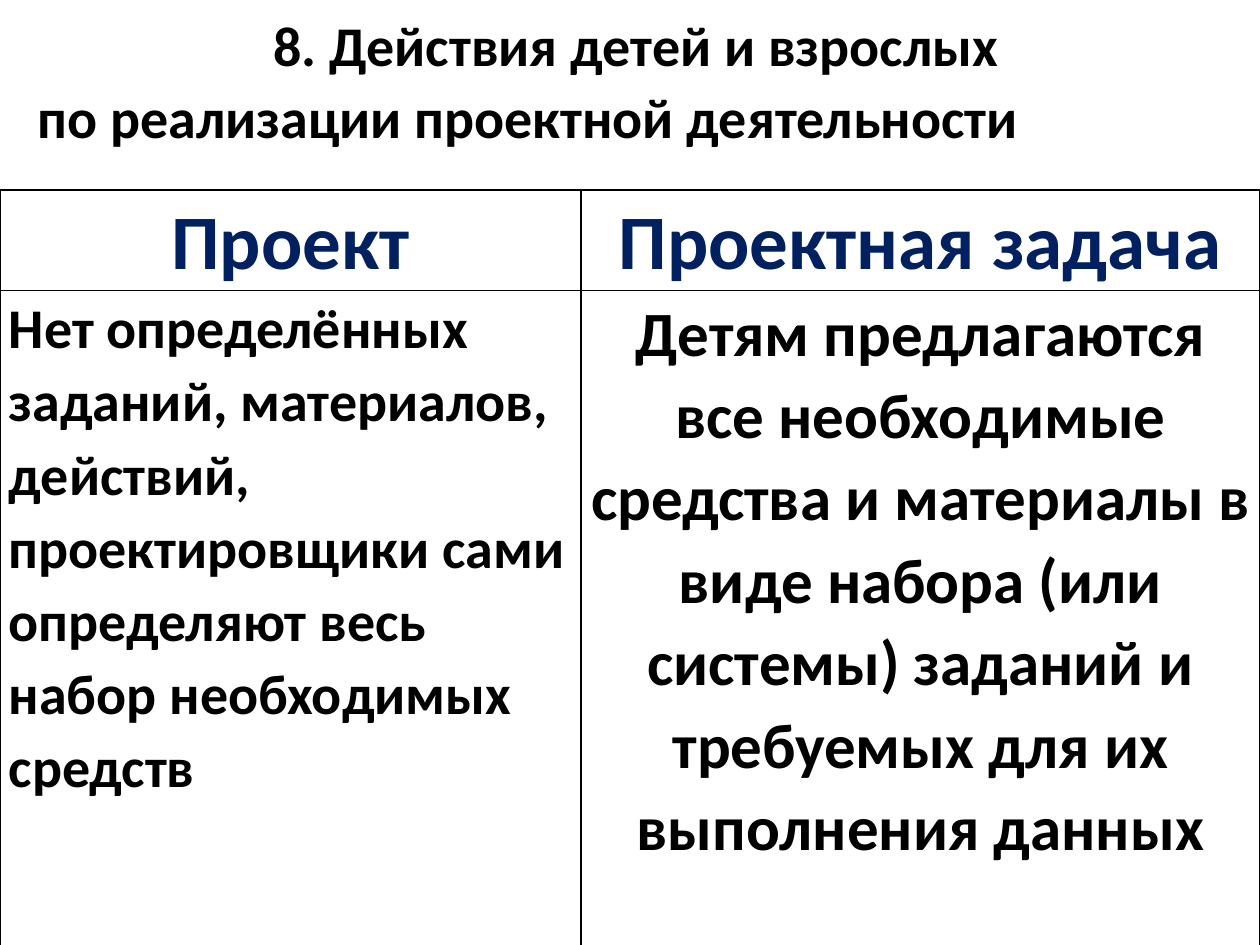
from lxml.etree import SubElement
from pptx import Presentation
from pptx.dml.color import RGBColor
from pptx.enum.text import MSO_ANCHOR, PP_ALIGN
from pptx.oxml.ns import qn
from pptx.util import Pt


def colour(value):
    return RGBColor.from_string(value)


class SlideBuilder:
    font = "Calibri"
    ink = "000000"
    accent = "002060"
    line_spacing = 1.07
    border_width = 1

    def __init__(self, page):
        self.page = page

    def add_text(self, para, text, size, ink=ink, align=PP_ALIGN.LEFT):
        para.alignment = align
        para.line_spacing = self.line_spacing
        span = para.add_run()
        span.text = text
        span.font.name = self.font
        span.font.size = Pt(size)
        span.font.bold = True
        span.font.color.rgb = colour(ink)

    def title(self, left, top, width, height, lines):
        box = self.page.shapes.add_textbox(Pt(left), Pt(top), Pt(width), Pt(height))
        frame = box.text_frame
        frame.word_wrap = True
        for index, (text, align) in enumerate(lines):
            para = frame.add_paragraph() if index else frame.paragraphs[0]
            self.add_text(para, text, 32, align=align)

    def border(self, cell):
        properties = cell._tc.get_or_add_tcPr()
        for position, side in enumerate(("lnL", "lnR", "lnT", "lnB")):
            line = SubElement(properties, qn(f"a:{side}"), w=str(Pt(self.border_width)))
            fill = SubElement(line, qn("a:solidFill"))
            SubElement(fill, qn("a:srgbClr"), val=self.ink)
            properties.insert(position, line)

    def table(self, left, top, columns, rows, contents):
        frame = self.page.shapes.add_table(
            len(rows), len(columns), Pt(left), Pt(top), Pt(sum(columns)), Pt(sum(rows))
        )
        table = frame.table
        table.first_row = False
        table.horz_banding = False
        for column, width in zip(table.columns, columns):
            column.width = Pt(width)
        for row, height, (inset, entries) in zip(table.rows, rows, contents):
            row.height = Pt(height)
            for cell, entry in zip(row.cells, entries):
                cell.fill.background()
                cell.margin_left = cell.margin_right = Pt(inset)
                cell.margin_top = cell.margin_bottom = 0
                cell.vertical_anchor = MSO_ANCHOR.TOP
                self.border(cell)
                self.add_text(cell.text_frame.paragraphs[0], *entry)


def main():
    deck = Presentation()
    deck.slide_width, deck.slide_height = Pt(720), Pt(540)
    builder = SlideBuilder(deck.slides.add_slide(deck.slide_layouts[6]))

    center, left = PP_ALIGN.CENTER, PP_ALIGN.LEFT
    ink, accent = builder.ink, builder.accent
    headings = [
        ("Проект", 44, accent, center),
        ("Проектная задача", 44, accent, center),
    ]
    descriptions = [
        (
            "Нет определённых заданий, материалов, действий, проектировщики "
            "сами определяют весь набор необходимых средств",
            32, ink, left,
        ),
        (
            "Детям предлагаются все необходимые средства и материалы в виде "
            "набора (или системы) заданий и требуемых для их выполнения данных",
            36, ink, center,
        ),
    ]
    builder.table(
        0, 108.5, [332, 388], [47.5, 377.5], [(4.4, headings), (5, descriptions)]
    )
    builder.title(14.4, 0, 705.6, 90, [
        ("8. Действия детей и взрослых ", center),
        ("по реализации проектной деятельности", left),
    ])
    deck.save("out.pptx")


if __name__ == "__main__":
    main()
